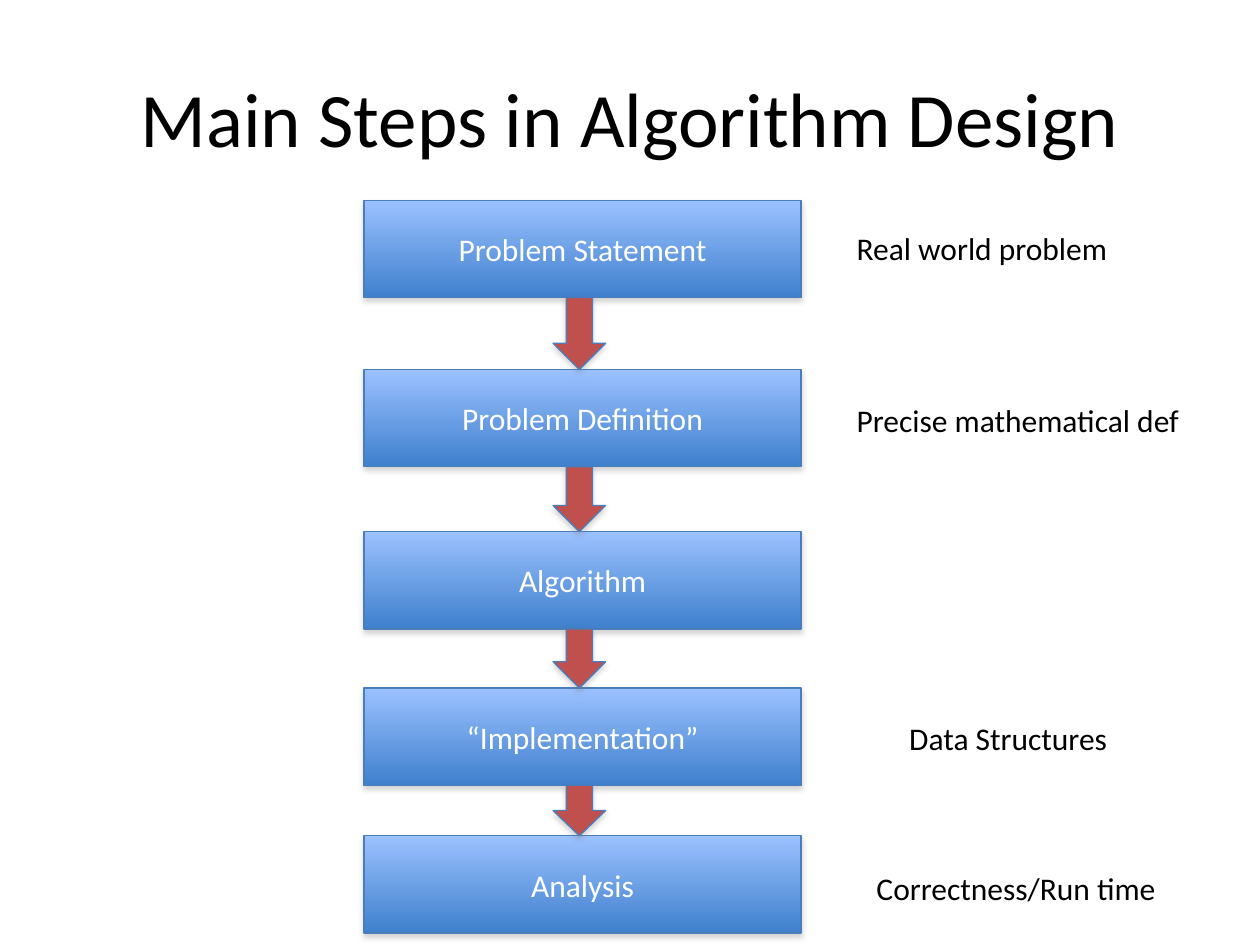
from lxml.etree import fromstring
from pptx import Presentation
from pptx.dml.color import RGBColor
from pptx.enum.shapes import MSO_SHAPE as Kind
from pptx.enum.text import MSO_ANCHOR as Anchor, MSO_AUTO_SIZE as Fit, PP_ALIGN as Align
from pptx.oxml.ns import qn
from pptx.util import Cm, Pt

SHADOW = """<a:outerShdw xmlns:a="http://schemas.openxmlformats.org/drawingml/2006/main"
 blurRad="40000" dist="23000" dir="5400000" rotWithShape="0">
<a:srgbClr val="808080"><a:alpha val="35000"/></a:srgbClr></a:outerShdw>"""


def write(shape, text, size=18, color="000000", align=Align.LEFT, anchor=Anchor.TOP):
    frame = shape.text_frame
    frame.vertical_anchor = anchor
    para = frame.paragraphs[0]
    para.alignment = align
    run = para.add_run()
    run.text = text
    run.font.name = "Calibri"
    run.font.size = Pt(size)
    run.font.color.rgb = RGBColor.from_string(color)


def add_shape(kind, left, top, width, height, *fills):
    """Add an outlined shape with a soft shadow; two fills make a gradient."""
    shape = slide.shapes.add_shape(kind, Cm(left), Cm(top), Cm(width), Cm(height))
    if len(fills) == 1:
        shape.fill.solid()
        shape.fill.fore_color.rgb = RGBColor.from_string(fills[0])
    else:
        shape.fill.gradient()
        shape.fill.gradient_angle = 270
        for stop, color in zip(shape.fill.gradient_stops, fills):
            stop.color.rgb = RGBColor.from_string(color)
    shape.line.color.rgb = RGBColor.from_string("4A7EBB")
    shape.line.width = Pt(0.75)
    shape.shadow.inherit = False
    shape.element.spPr.find(qn("a:effectLst")).append(fromstring(SHADOW))
    return shape


prs = Presentation()
prs.slide_width, prs.slide_height = Cm(25.4), Cm(19.05)
slide = prs.slides.add_slide(prs.slide_layouts[5])

title = slide.shapes.title
title.left, title.top, title.width, title.height = Cm(1.27), Cm(0.76), Cm(22.86), Cm(3.18)
write(title, "Main Steps in Algorithm Design", size=44, align=Align.CENTER, anchor=Anchor.MIDDLE)

# Steps of the flow, each joined to the one above by a block arrow
HIGH = 1.96
steps = [
    (4.04, "Problem Statement"),
    (7.45, "Problem Definition"),
    (10.72, "Algorithm"),
    (13.87, "“Implementation”"),
    (16.85, "Analysis"),
]
end = None
for top, text in steps:
    box = add_shape(Kind.RECTANGLE, 7.34, top, 8.81, HIGH, "9BC1FF", "3F80CD")
    write(box, text, color="FFFFFF", align=Align.CENTER, anchor=Anchor.MIDDLE)
    if end:
        add_shape(Kind.DOWN_ARROW, 11.15, end, 1.06, top - end, "C0504D")
    end = top + HIGH

notes = [
    (17.02, 4.5, 6.05, "Real world problem"),
    (17.02, 7.95, 7.85, "Precise mathematical def"),
    (18.08, 14.38, 4.95, "Data Structures"),
    (17.42, 17.4, 6.71, "Correctness/Run time"),
]
for left, top, width, text in notes:
    note = slide.shapes.add_textbox(Cm(left), Cm(top), Cm(width), Cm(1.02))
    note.text_frame.word_wrap = False
    note.text_frame.auto_size = Fit.SHAPE_TO_FIT_TEXT
    write(note, text)

prs.save("out.pptx")
